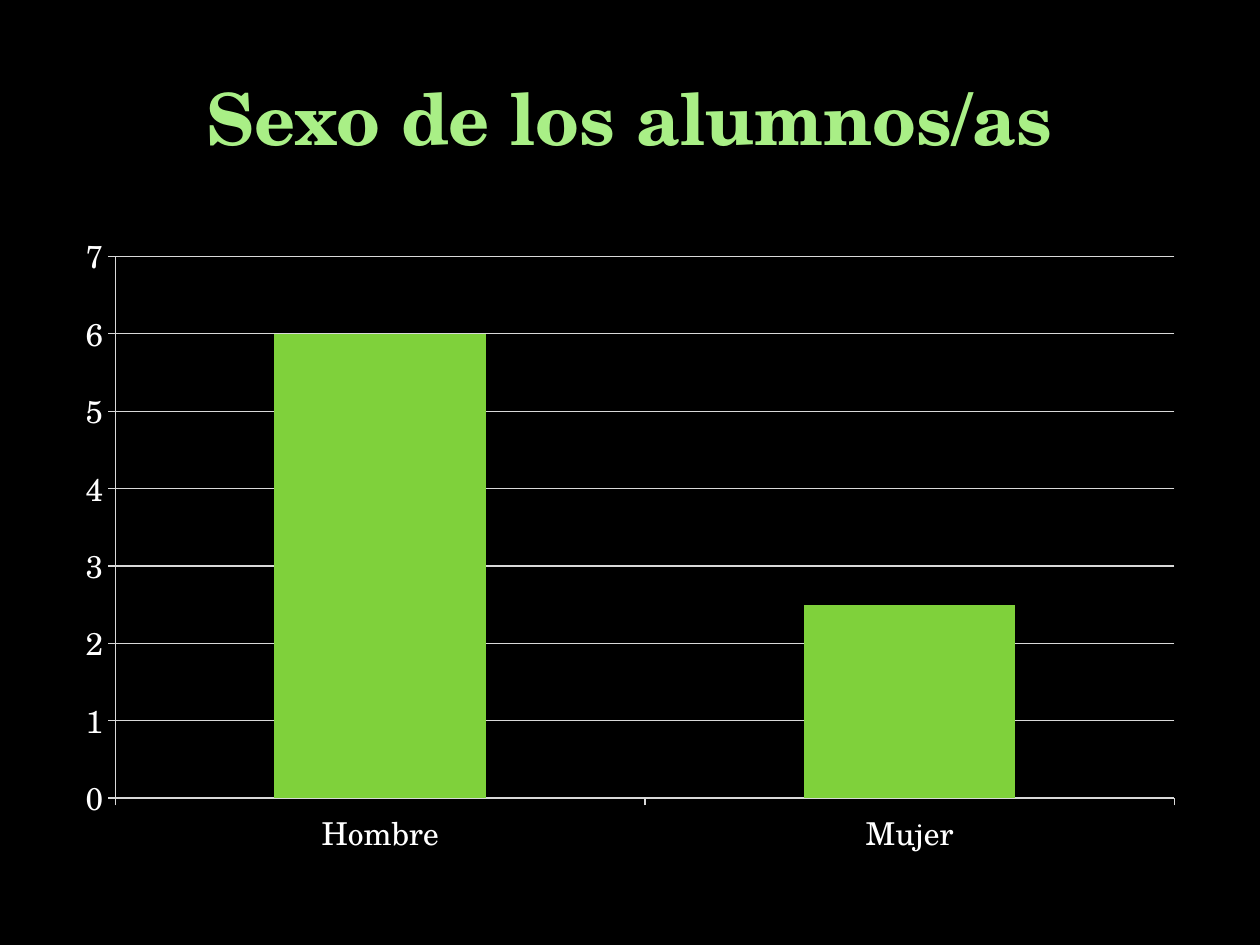
"""Build a slide with a column chart of students by sex."""
from typing import NamedTuple

from pptx import Presentation
from pptx.chart import data as chart_data
from pptx.dml.color import RGBColor
from pptx.enum import chart as chart_enum, text
from pptx.util import Inches, Pt

FONT = "TeX Gyre Schola"
BLACK = RGBColor(0x00, 0x00, 0x00)
WHITE = RGBColor(0xFF, 0xFF, 0xFF)
LINE_GRAY = RGBColor(0xD9, 0xD9, 0xD9)
TITLE_GREEN = RGBColor(0xA9, 0xEF, 0x86)
BAR_GREEN = RGBColor(0x7F, 0xD1, 0x3B)


class Group(NamedTuple):
    label: str
    value: float


GROUPS = [Group("Hombre", 6), Group("Mujer", 2.5)]


def add_title(slide, wording: str) -> None:
    """Add the centred slide heading."""
    shape = slide.shapes.add_textbox(Inches(0.5), Inches(0.3), Inches(9), Inches(1.25))
    frame = shape.text_frame
    frame.word_wrap = True
    frame.vertical_anchor = text.MSO_ANCHOR.MIDDLE
    paragraph = frame.paragraphs[0]
    paragraph.text = wording
    paragraph.alignment = text.PP_ALIGN.CENTER
    paragraph.font.name = FONT
    paragraph.font.size = Pt(41)
    paragraph.font.bold = True
    paragraph.font.color.rgb = TITLE_GREEN


def style_axis(axis) -> None:
    """Give an axis thin light lines and outside ticks."""
    axis.major_tick_mark = chart_enum.XL_TICK_MARK.OUTSIDE
    axis.minor_tick_mark = chart_enum.XL_TICK_MARK.NONE
    axis.format.line.color.rgb = LINE_GRAY
    axis.format.line.width = Pt(0.75)


def add_column_chart(slide, groups: list[Group]) -> None:
    """Add the column chart with one bar per group."""
    data = chart_data.CategoryChartData()
    data.categories = [group.label for group in groups]
    data.add_series("Series 1", [group.value for group in groups])
    chart = slide.shapes.add_chart(
        chart_enum.XL_CHART_TYPE.COLUMN_CLUSTERED,
        Inches(0.5), Inches(1.75), Inches(9), Inches(5.15), data,
    ).chart
    chart.has_title = False
    chart.has_legend = False
    chart.font.name = FONT
    chart.font.size = Pt(18)
    chart.font.color.rgb = WHITE

    plot = chart.plots[0]
    plot.vary_by_categories = False
    plot.gap_width = 150
    fill = plot.series[0].format.fill
    fill.solid()
    fill.fore_color.rgb = BAR_GREEN

    for axis in (chart.category_axis, chart.value_axis):
        style_axis(axis)
    value_axis = chart.value_axis
    value_axis.minimum_scale = 0
    value_axis.maximum_scale = 7
    value_axis.major_unit = 1
    value_axis.has_major_gridlines = True
    gridline = value_axis.major_gridlines.format.line
    gridline.color.rgb = LINE_GRAY
    gridline.width = Pt(0.75)


def main() -> None:
    """Create and save the presentation."""
    presentation = Presentation()
    presentation.slide_width = Inches(10)
    presentation.slide_height = Inches(7.5)
    slide = presentation.slides.add_slide(presentation.slide_layouts[6])
    background = slide.background.fill
    background.solid()
    background.fore_color.rgb = BLACK
    add_title(slide, "Sexo de los alumnos/as")
    add_column_chart(slide, GROUPS)
    presentation.save("out.pptx")


if __name__ == "__main__":
    main()
